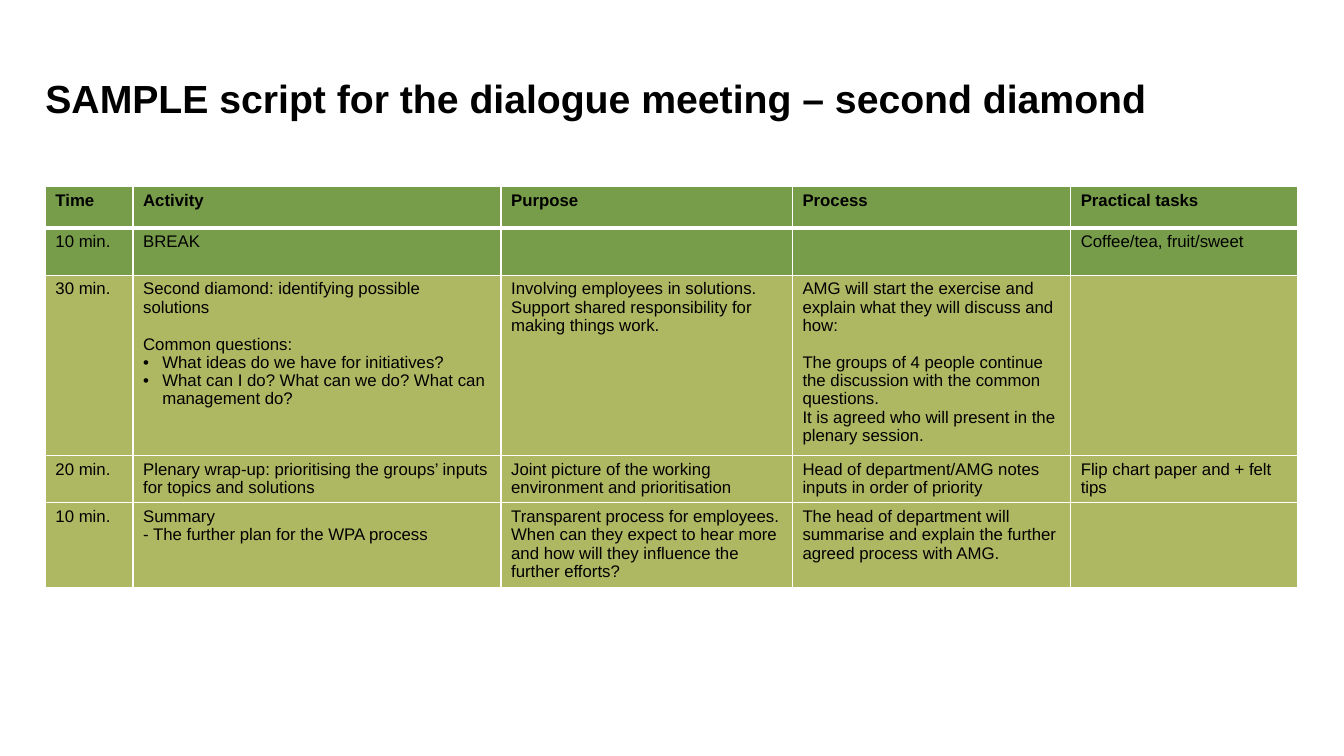
from lxml import etree
from pptx import Presentation
from pptx.dml.color import RGBColor
from pptx.enum.text import MSO_ANCHOR, PP_ALIGN
from pptx.oxml.ns import qn
from pptx.util import Inches, Pt

TOP, LEFT = MSO_ANCHOR.TOP, PP_ALIGN.LEFT

TITLE = "SAMPLE script for the dialogue meeting – second diamond"
HEADINGS = ["Time", "Activity", "Purpose", "Process", "Practical tasks"]
AGENDA = [
    ["10 min.", "BREAK", "", "", "Coffee/tea, fruit/sweet"],
    ["30 min.",
     ["Second diamond: identifying possible solutions",
      ("gap", "Common questions:"),
      ("bullet", "What ideas do we have for initiatives?"),
      ("bullet", "What can I do? What can we do? What can management do?")],
     ["Involving employees in solutions.",
      "Support shared responsibility for making things work."],
     ["AMG will start the exercise and explain what they will discuss and how:",
      ("gap", "The groups of 4 people continue the discussion with the common questions."),
      "It is agreed who will present in the plenary session."],
     ""],
    ["20 min.",
     "Plenary wrap-up: prioritising the groups’ inputs for topics and solutions",
     "Joint picture of the working environment and prioritisation",
     "Head of department/AMG notes inputs in order of priority",
     "Flip chart paper and + felt tips"],
    ["10 min.",
     ["Summary", "- The further plan for the WPA process"],
     "Transparent process for employees. When can they expect to hear more "
     "and how will they influence the further efforts?",
     "The head of department will summarise and explain the further agreed process with AMG.",
     ""],
]
COLUMN_WIDTHS = [0.87, 3.65, 2.89, 2.76, 2.25]
ROW_HEIGHTS = [0.41, 0.47, 1.79, 0.47, 0.84]
MARGIN, TITLE_TOP, TABLE_TOP = 0.45, 0.76, 1.85
FONT, LINE_SPACING, BULLET_INDENT = "Arial", 0.97, 0.19
BLACK, WHITE, GREEN, OLIVE = "000000", "FFFFFF", "789D4A", "AEB862"


def colour(value):
    return RGBColor.from_string(value)


def style(paragraph, size, bold):
    paragraph.line_spacing = LINE_SPACING
    paragraph.alignment = LEFT
    font = paragraph.font
    font.name, font.size, font.bold = FONT, Pt(size), bold
    font.color.rgb = colour(BLACK)


def add_bullet(paragraph):
    properties = paragraph._p.get_or_add_pPr()
    properties.set("marL", str(Inches(BULLET_INDENT)))
    properties.set("indent", str(-Inches(BULLET_INDENT)))
    etree.SubElement(properties, qn("a:buFont"), typeface=FONT)
    etree.SubElement(properties, qn("a:buChar"), char="•")


def add_borders(cell, top, bottom):
    properties = cell._tc.get_or_add_tcPr()
    for side, width in (("L", 1), ("R", 1), ("T", top), ("B", bottom)):
        line = etree.SubElement(properties, qn(f"a:ln{side}"), w=str(Pt(width)))
        fill = etree.SubElement(line, qn("a:solidFill"))
        etree.SubElement(fill, qn("a:srgbClr"), val=WHITE)


def fill_cell(cell, content, row):
    add_borders(cell, 3 if row == 1 else 1, 3 if row == 0 else 1)
    cell.fill.solid()
    cell.fill.fore_color.rgb = colour(GREEN if row < 2 else OLIVE)
    entries = content if isinstance(content, list) else [content]
    for index, entry in enumerate(entries):
        kind, text = entry if isinstance(entry, tuple) else ("plain", entry)
        frame = cell.text_frame
        paragraph = frame.add_paragraph() if index else frame.paragraphs[0]
        paragraph.text = text
        if kind == "gap":
            paragraph.space_before = Pt(13.4)
        if kind == "bullet":
            add_bullet(paragraph)
        style(paragraph, 12, row == 0)


def add_title(slide):
    title = slide.shapes.title
    title.left, title.top = Inches(MARGIN), Inches(TITLE_TOP)
    title.width, title.height = Inches(11.99), Inches(0.73)
    frame = title.text_frame
    frame.margin_left = frame.margin_right = frame.margin_top = frame.margin_bottom = 0
    frame.vertical_anchor = TOP
    frame.text = TITLE
    style(frame.paragraphs[0], 28, True)


def add_agenda(slide):
    rows = [HEADINGS] + AGENDA
    agenda = slide.shapes.add_table(
        len(rows), len(HEADINGS), Inches(MARGIN), Inches(TABLE_TOP),
        Inches(sum(COLUMN_WIDTHS)), Inches(sum(ROW_HEIGHTS))).table
    for column, width in zip(agenda.columns, COLUMN_WIDTHS):
        column.width = Inches(width)
    for row, height in enumerate(ROW_HEIGHTS):
        agenda.rows[row].height = Inches(height)
        for column, content in enumerate(rows[row]):
            fill_cell(agenda.cell(row, column), content, row)


def main():
    """Build the dialogue meeting script slide."""
    deck = Presentation()
    deck.slide_width, deck.slide_height = Inches(13.33), Inches(7.5)
    slide = deck.slides.add_slide(deck.slide_layouts[5])
    add_agenda(slide)
    add_title(slide)
    deck.save("out.pptx")


if __name__ == "__main__":
    main()
